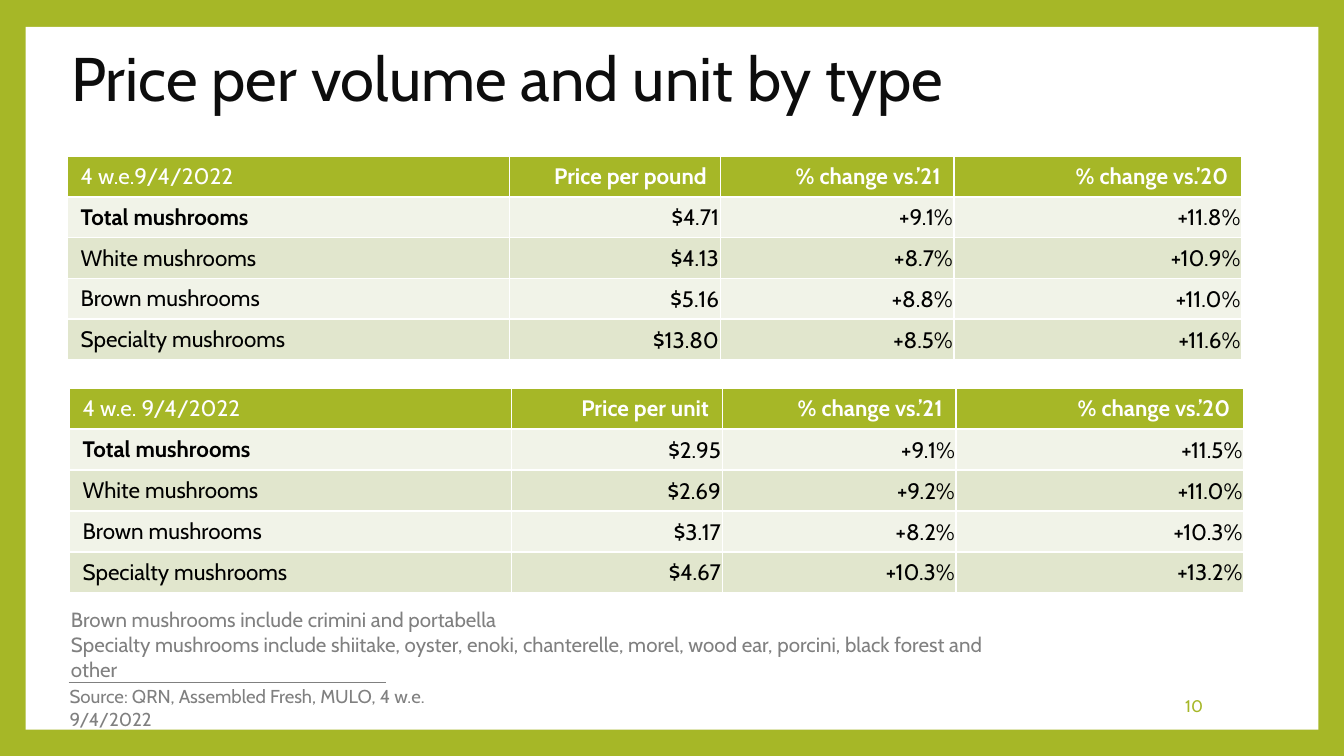
from lxml import etree
from pptx import Presentation
from pptx import util as u
from pptx.dml.color import RGBColor
from pptx.enum import shapes, text
from pptx.oxml import parse_xml
from pptx.oxml.ns import nsdecls, qn

PX = 4572
GREEN = RGBColor(0xA6, 0xB7, 0x27)
WHITE = RGBColor(0xFF, 0xFF, 0xFF)
BLACK = RGBColor(0, 0, 0)
INK = RGBColor(0x0D, 0x0D, 0x0D)
GRAY = RGBColor(0x80, 0x80, 0x80)
PALE = RGBColor(0xF1, 0xF3, 0xE8)
SAGE = RGBColor(0xE1, 0xE6, 0xCD)


def box(*lengths):
    return [n * PX for n in lengths]


def add_run(paragraph, words, size, color, bold=False):
    run = paragraph.add_run()
    run.text = words
    run.font.name = "Cabin"
    run.font.size = u.Pt(size)
    run.font.bold = bold
    run.font.color.rgb = color


deck = Presentation()
deck.slide_width, deck.slide_height = box(2000, 1125)
slide = deck.slides.add_slide(deck.slide_layouts[5])
slide.background.fill.solid()
slide.background.fill.fore_color.rgb = GREEN

panel = slide.shapes.add_shape(shapes.MSO_SHAPE.RECTANGLE, *box(38, 40, 1924, 1046))
panel.shadow.inherit = False
panel.fill.solid()
panel.fill.fore_color.rgb = WHITE
panel.line.fill.background()
slide.shapes._spTree.insert(2, panel._element)

title = slide.shapes.title
title.left, title.top, title.width, title.height = box(86, 42, 1706, 158)
title.text_frame.vertical_anchor = text.MSO_ANCHOR.MIDDLE
title.text_frame.auto_size = text.MSO_AUTO_SIZE.NONE
heading = title.text_frame.paragraphs[0]
heading.alignment = text.PP_ALIGN.LEFT
heading.line_spacing = 0.9
add_run(heading, "Price per volume and unit by type", 33, INK)

price_tables = [
    (100, 232, [
        ("4 w.e.9/4/2022", "Price per pound", "% change vs.’21", "% change vs.’20"),
        ("Total mushrooms", "$4.71", "+9.1%", "+11.8%"),
        ("White mushrooms", "$4.13", "+8.7%", "+10.9%"),
        ("Brown mushrooms", "$5.16", "+8.8%", "+11.0%"),
        ("Specialty mushrooms", "$13.80", "+8.5%", "+11.6%"),
    ]),
    (103, 578, [
        ("4 w.e. 9/4/2022", "Price per unit", "% change vs.’21", "% change vs.’20"),
        ("Total mushrooms", "$2.95", "+9.1%", "+11.5%"),
        ("White mushrooms", "$2.69", "+9.2%", "+11.0%"),
        ("Brown mushrooms", "$3.17", "+8.2%", "+10.3%"),
        ("Specialty mushrooms", "$4.67", "+10.3%", "+13.2%"),
    ]),
]
column_widths = [658, 314, 348, 428]

for left, top, rows in price_tables:
    frame = slide.shapes.add_table(5, 4, *box(left, top, sum(column_widths), 300))
    prices = frame.table
    for column, width in zip(prices.columns, column_widths):
        column.width = width * PX
    for r, row in enumerate(rows):
        for c, words in enumerate(row):
            cell = prices.cell(r, c)
            header = r == 0
            if not header:
                cell.vertical_anchor = text.MSO_ANCHOR.MIDDLE
                if c:
                    cell.margin_left = cell.margin_top = cell.margin_right = 2 * PX
                    cell.margin_bottom = 0
            paragraph = cell.text_frame.paragraphs[0]
            paragraph.alignment = text.PP_ALIGN.RIGHT if c else text.PP_ALIGN.LEFT
            bold = c > 0 if header else (r, c) == (1, 0)
            add_run(paragraph, words, 12, WHITE if header else BLACK, bold)
            for side in ("lnL", "lnR", "lnT", "lnB"):
                cell._tc.get_or_add_tcPr().append(parse_xml(
                    f'<a:{side} {nsdecls("a")} w="12700"><a:solidFill>'
                    f'<a:srgbClr val="{WHITE}"/></a:solidFill></a:{side}>'))
            cell.fill.solid()
            cell.fill.fore_color.rgb = GREEN if header else PALE if r % 2 else SAGE

captions = [
    (box(86, 894, 1472, 94), 11, GRAY, text.PP_ALIGN.LEFT, text.MSO_ANCHOR.TOP, [
        "Brown mushrooms include crimini and portabella",
        "Specialty mushrooms include shiitake, oyster, enoki, chanterelle, morel, "
        "wood ear, porcini, black forest and other",
    ]),
    (box(84, 1010, 648, 54), 10, GRAY, text.PP_ALIGN.LEFT, text.MSO_ANCHOR.TOP, [
        "Source: QRN, Assembled Fresh, MULO, 4 w.e. 9/4/2022",
    ]),
    (box(1530, 1020, 280, 60), 9, GREEN, text.PP_ALIGN.RIGHT, text.MSO_ANCHOR.MIDDLE, ["10"]),
]
for place, size, color, alignment, anchor, lines in captions:
    caption = slide.shapes.add_textbox(*place).text_frame
    caption.word_wrap = True
    caption.vertical_anchor = anchor
    for i, words in enumerate(lines):
        paragraph = caption.add_paragraph() if i else caption.paragraphs[0]
        paragraph.alignment = alignment
        add_run(paragraph, words, size, color)

source_rule = slide.shapes.add_connector(
    shapes.MSO_CONNECTOR.STRAIGHT, *box(102, 1016, 574, 1016))
source_rule.line.color.rgb = GRAY
source_rule.line.width = u.Pt(0.79)
etree.SubElement(source_rule._element.spPr, qn("a:effectLst"))

deck.save("out.pptx")
